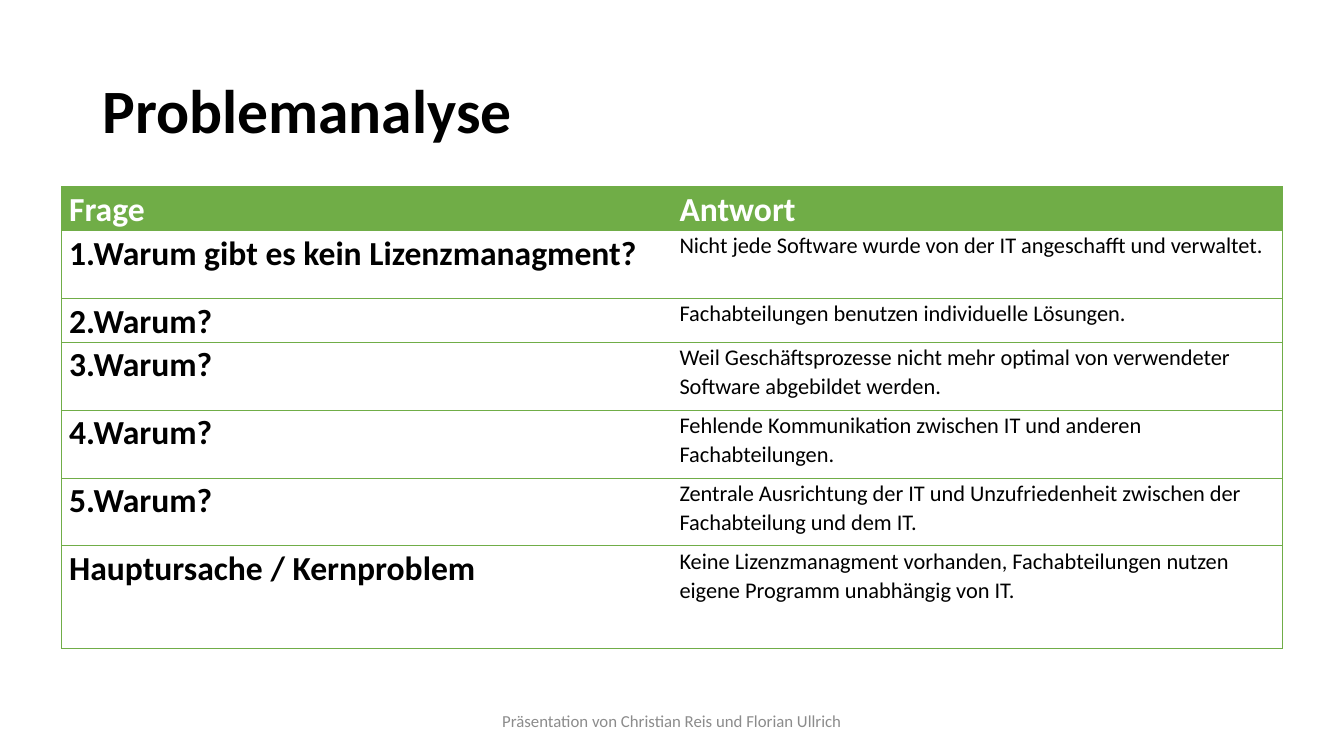
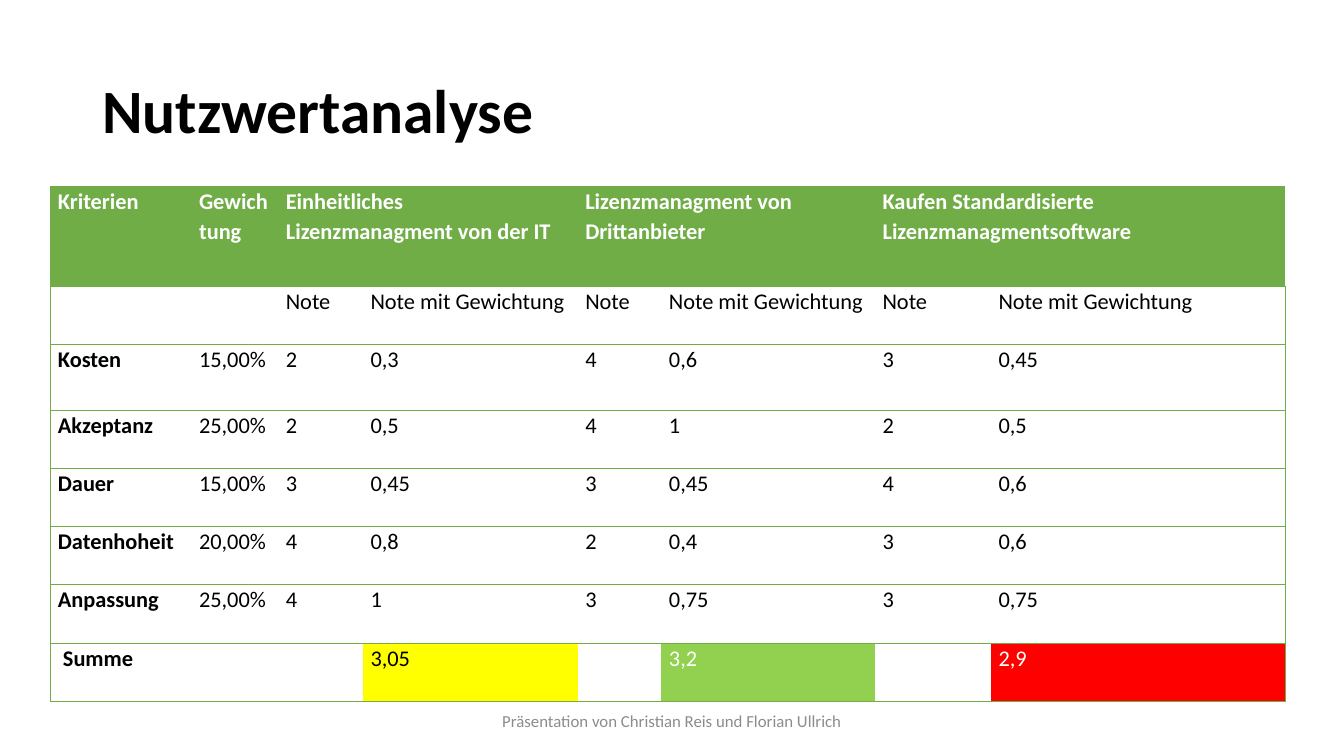
from lxml import etree
from pptx import Presentation
from pptx.dml.color import RGBColor
from pptx.enum import text
from pptx.oxml.ns import qn
from pptx.util import Pt

BLACK = RGBColor(0, 0, 0)
WHITE = RGBColor(255, 255, 255)
GRAY = RGBColor(0x8C, 0x8C, 0x8C)
GREEN = RGBColor(0x70, 0xAD, 0x47)
LIME = RGBColor(0x92, 0xD0, 0x50)
YELLOW = RGBColor(255, 255, 0)
RED = RGBColor(255, 0, 0)
FONT = "Calibri"
TOP = 133.2
FOOTER = "Präsentation von Christian Reis und Florian Ullrich"

CAUSES = [
    ["Frage", "Antwort"],
    ["1.Warum gibt es kein Lizenzmanagment?",
     "Nicht jede Software wurde von der IT angeschafft und verwaltet."],
    ["2.Warum?", "Fachabteilungen benutzen individuelle Lösungen."],
    ["3.Warum?", "Weil Geschäftsprozesse nicht mehr optimal von verwendeter "
     "Software abgebildet werden."],
    ["4.Warum?", "Fehlende Kommunikation zwischen IT und anderen Fachabteilungen."],
    ["5.Warum?", "Zentrale Ausrichtung der IT und Unzufriedenheit zwischen der "
     "Fachabteilung und dem IT."],
    ["Hauptursache / Kernproblem",
     "Keine Lizenzmanagment vorhanden, Fachabteilungen nutzen eigene Programm "
     "unabhängig von IT."],
]

SCORES = [
    ["Kriterien", "Gewichtung", "Einheitliches Lizenzmanagment von der IT", "",
     "Lizenzmanagment von Drittanbieter", "",
     "Kaufen Standardisierte Lizenzmanagmentsoftware", ""],
    ["", ""] + ["Note", "Note mit Gewichtung"] * 3,
    ["Kosten", "15,00%", "2", "0,3", "4", "0,6", "3", "0,45"],
    ["Akzeptanz", "25,00%", "2", "0,5", "4", "1", "2", "0,5"],
    ["Dauer", "15,00%", "3", "0,45", "3", "0,45", "4", "0,6"],
    ["Datenhoheit", "20,00%", "4", "0,8", "2", "0,4", "3", "0,6"],
    ["Anpassung", "25,00%", "4", "1", "3", "0,75", "3", "0,75"],
    [" Summe", "", "", "3,05", "", "3,2", "", "2,9"],
]
SUMS = {(7, 3): (YELLOW, BLACK), (7, 5): (LIME, WHITE), (7, 7): (RED, WHITE)}


def style(para, size, color, bold=False, spacing=None):
    font = para.font
    font.name, font.size, font.bold = FONT, Pt(size), bold
    font.color.rgb = color
    para.line_spacing = spacing


def add_text(slide, words, box, size, color, **look):
    frame = slide.shapes.add_textbox(*map(Pt, box)).text_frame
    frame.word_wrap = True
    frame.vertical_anchor = text.MSO_ANCHOR.MIDDLE
    frame.text = words
    style(frame.paragraphs[0], size, color, **look)
    return frame.paragraphs[0]


def add_slide(deck, title):
    slide = deck.slides.add_slide(deck.slide_layouts[6])
    add_text(slide, title, (66, 28.8, 828, 104.4), 44, BLACK, bold=True, spacing=0.9)
    footer = add_text(slide, FOOTER, (318, 500.5, 324, 28.8), 12, GRAY)
    footer.alignment = text.PP_ALIGN.CENTER
    return slide


def set_edges(cell, shown):
    """Draw green lines on the shown sides (of L, R, T, B) and none on the rest."""
    props = cell._tc.get_or_add_tcPr()
    for side in "LRTB":
        line = etree.SubElement(props, qn(f"a:ln{side}"), w=str(Pt(0.5)))
        if side in shown:
            fill = etree.SubElement(line, qn("a:solidFill"))
            etree.SubElement(fill, qn("a:srgbClr"), val=str(GREEN))
        else:
            etree.SubElement(line, qn("a:noFill"))


def fill_cell(cell, words, size, fill, ink, bold):
    cell.margin_left = cell.margin_right = Pt(5.4)
    cell.margin_top = cell.margin_bottom = 0
    cell.text = words
    style(cell.text_frame.paragraphs[0], size, ink, bold, 1.07)
    cell.fill.solid()
    cell.fill.fore_color.rgb = fill


def add_grid(slide, left, rows, widths, heights, lead=16, marks=None):
    """Add a table; lead is the text size of its first row and column."""
    marks = marks or {}
    last = len(widths) - 1
    table = slide.shapes.add_table(
        len(rows), len(widths), Pt(left), Pt(TOP),
        Pt(sum(widths)), Pt(sum(heights))).table
    table.horz_banding = False
    for col, width in zip(table.columns, widths):
        col.width = Pt(width)
    for row, height in zip(table.rows, heights):
        row.height = Pt(height)
    for r, row in enumerate(rows):
        for c, words in enumerate(row):
            cell = table.cell(r, c)
            set_edges(cell, "TB" + "L" * (c == 0) + "R" * (c == last))
            plain = (GREEN, WHITE) if r == 0 else (WHITE, BLACK)
            fill, ink = marks.get((r, c), plain)
            head = r == 0 or c == 0
            fill_cell(cell, words, lead if head else 16, fill, ink, head)
    for c, words in enumerate(rows[0]):
        if not words:
            table.cell(0, c - 1).merge(table.cell(0, c))


def main():
    deck = Presentation()
    deck.slide_width, deck.slide_height = Pt(960), Pt(540)
    add_grid(add_slide(deck, "Problemanalyse"), 44, CAUSES, [436] * 2,
             [31.4, 48.5, 31.4, 48.5, 48.5, 48.5, 73.5], lead=24)
    add_grid(add_slide(deck, "Nutzwertanalyse"), 36, SCORES,
             [100.8, 62, 60.5, 153.4, 59.8, 152.6, 82.8, 210.2],
             [71.3, 41.6, 46.8] + [41.6] * 5, marks=SUMS)
    deck.save("out.pptx")


if __name__ == "__main__":
    main()
